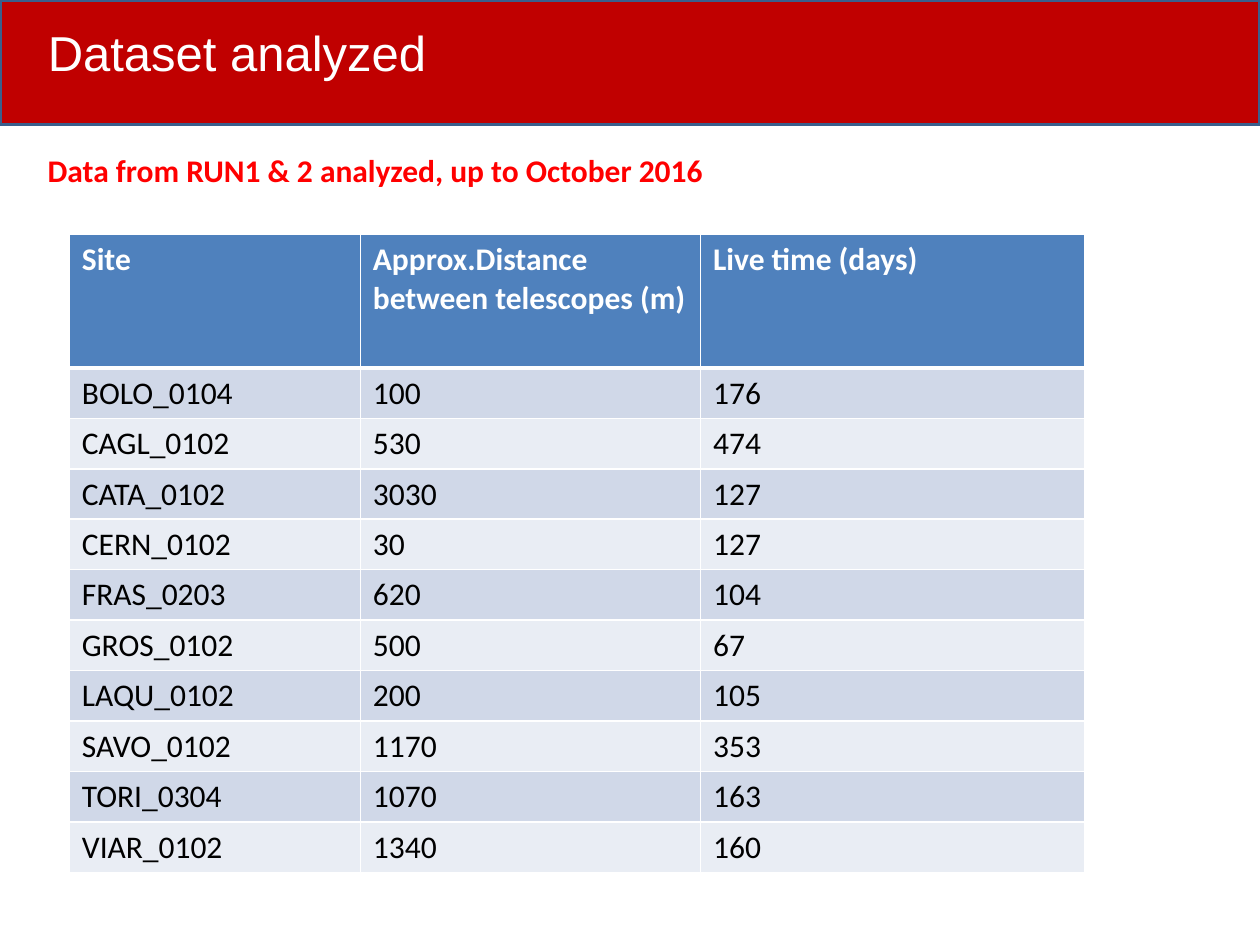
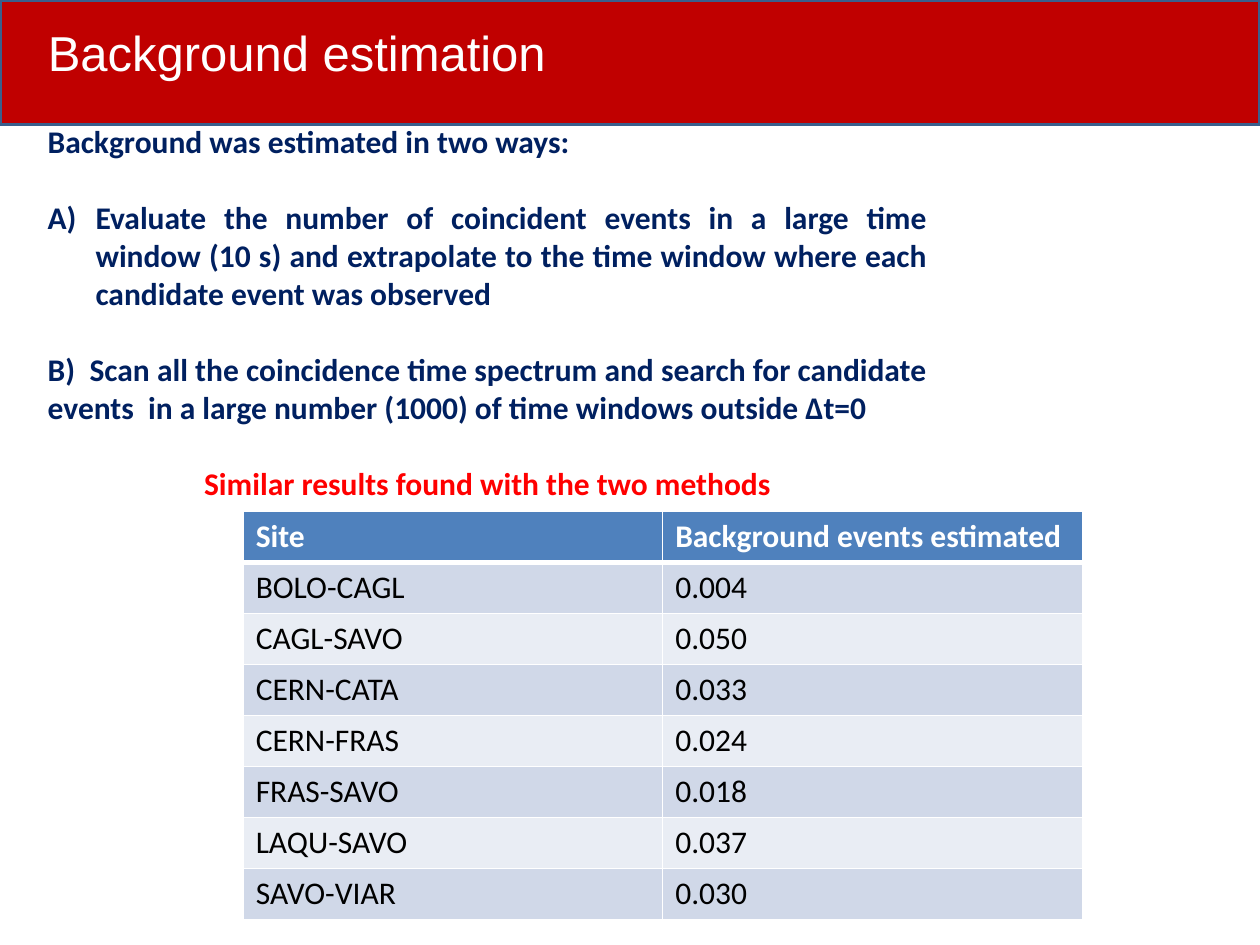
from lxml import etree
from pptx import Presentation, util as u
from pptx.dml.color import RGBColor
from pptx.enum import shapes, text
from pptx.oxml import ns

WHITE = RGBColor(0xFF, 0xFF, 0xFF)
BLACK = RGBColor(0x00, 0x00, 0x00)
BAND_RED = RGBColor(0xC0, 0x00, 0x00)
BAND_EDGE = RGBColor(0x3A, 0x5F, 0x8C)
RED = RGBColor(0xFF, 0x00, 0x00)
NAVY = RGBColor(0x00, 0x20, 0x60)
HEADER_BLUE = RGBColor(0x4F, 0x81, 0xBD)
STRIPES = RGBColor(0xD0, 0xD8, 0xE8), RGBColor(0xE9, 0xED, 0xF4)

WIDTH, HEIGHT = u.Inches(10), u.Inches(7.5)
COLS, ROWS = 100, 75
TITLE_ONLY = 5
LEFT = 2.8
BLANK_LINE = 22
HANGING = 3.8


def cols(n):
    return round(WIDTH * n / COLS)


def rows(n):
    return round(HEIGHT * n / ROWS)


def box(x, y, w, h):
    return cols(x), rows(y), cols(w), rows(h)


def write(p, words, *, size=18, font="Calibri", color=BLACK, bold=False,
          align=text.PP_ALIGN.LEFT, before=0, numbered=False):
    """Fill paragraph p with one formatted run."""
    p.alignment = align
    p.space_before = u.Pt(before)
    r = p.add_run()
    r.text = words
    r.font.size = u.Pt(size)
    r.font.name = font
    r.font.bold = bold
    r.font.color.rgb = color
    if numbered:
        pPr = p._p.get_or_add_pPr()
        pPr.set("marL", str(cols(HANGING)))
        pPr.set("indent", str(-cols(HANGING)))
        etree.SubElement(pPr, ns.qn("a:buAutoNum"), type="alphaUcParenR")


def set_borders(cell, **widths):
    """Draw white cell borders; the keywords L, R, T and B are widths in points."""
    tcPr = cell._tc.get_or_add_tcPr()
    for side in "LRTB":
        ln = etree.SubElement(tcPr, ns.qn(f"a:ln{side}"),
                              w=str(u.Pt(widths.get(side, 1))))
        fill = etree.SubElement(ln, ns.qn("a:solidFill"))
        etree.SubElement(fill, ns.qn("a:srgbClr"), val=str(WHITE))


class Deck:
    def __init__(self):
        self.prs = Presentation()
        self.prs.slide_width, self.prs.slide_height = WIDTH, HEIGHT
        self.s = None

    def slide(self, title):
        self.s = self.prs.slides.add_slide(self.prs.slide_layouts[TITLE_ONLY])
        self.band()
        sp = self.s.shapes.title
        sp.left, sp.top, sp.width, sp.height = box(LEFT, 1.3, 53.5, 5.7)
        tf = sp.text_frame
        tf.vertical_anchor = text.MSO_ANCHOR.TOP
        tf.auto_size = text.MSO_AUTO_SIZE.NONE
        write(tf.paragraphs[0], title, size=28, font="Arial", color=WHITE)

    def band(self):
        """Add the red title band behind everything else."""
        sp = self.s.shapes.add_shape(shapes.MSO_SHAPE.RECTANGLE,
                                     *box(0, 0, COLS, 9.9))
        sp.shadow.inherit = False
        sp.fill.solid()
        sp.fill.fore_color.rgb = BAND_RED
        sp.line.color.rgb = BAND_EDGE
        sp.line.width = u.Pt(2)
        self.s.shapes._spTree.insert(2, sp._element)

    def text(self, place, *paragraphs):
        """Add a text box; each paragraph is a pair of words and format."""
        tf = self.s.shapes.add_textbox(*box(*place)).text_frame
        tf.word_wrap = True
        for i, (words, style) in enumerate(paragraphs):
            p = tf.add_paragraph() if i else tf.paragraphs[0]
            write(p, words, bold=True, **style)

    def table(self, x, y, widths, header_height, row_height, records):
        """Add a striped table whose first record is the header."""
        heights = [header_height] + [row_height] * (len(records) - 1)
        frame = self.s.shapes.add_table(
            len(records), len(widths), *box(x, y, sum(widths), sum(heights)))
        table = frame.table
        for column, width in zip(table.columns, widths):
            column.width = cols(width)
        for i, (row, height, record) in enumerate(
                zip(table.rows, heights, records)):
            row.height = rows(height)
            header = i == 0
            for cell, words in zip(row.cells, record):
                set_borders(cell, T=3 if i == 1 else 1, B=3 if header else 1)
                cell.fill.solid()
                cell.fill.fore_color.rgb = (
                    HEADER_BLUE if header else STRIPES[(i - 1) % 2])
                write(cell.text_frame.paragraphs[0], words, bold=header,
                      color=WHITE if header else BLACK)


def dataset_slide(deck):
    deck.slide("Dataset analyzed")
    deck.text((LEFT, 11.5, 79.4, 4),
              ("Data from RUN1 & 2 analyzed, up to October 2016", dict(color=RED)))
    deck.table(5.5, 18.6, (23.1, 27, 30.5), 10.6, 4, [
        ("Site", "Approx.Distance between telescopes (m)", "Live time (days)"),
        ("BOLO_0104", "100", "176"),
        ("CAGL_0102", "530", "474"),
        ("CATA_0102", "3030", "127"),
        ("CERN_0102", "30", "127"),
        ("FRAS_0203", "620", "104"),
        ("GROS_0102", "500", "67"),
        ("LAQU_0102", "200", "105"),
        ("SAVO_0102", "1170", "353"),
        ("TORI_0304", "1070", "163"),
        ("VIAR_0102", "1340", "160"),
    ])


def background_slide(deck):
    deck.slide("Background estimation")
    method = dict(color=NAVY, align=text.PP_ALIGN.JUSTIFY, before=BLANK_LINE)
    deck.text(
        (LEFT, 9.2, 71.8, 34.3),
        ("Background was estimated in two ways:", dict(color=NAVY)),
        ("Evaluate the number of coincident events in a large time window "
         "(10 s) and extrapolate to the time window where each candidate "
         "event was observed", dict(method, numbered=True)),
        ("B)  Scan all the coincidence time spectrum and search for candidate "
         "events  in a large number (1000) of time windows outside Δt=0", method),
        ("Similar results found with the two methods",
         dict(color=RED, align=text.PP_ALIGN.CENTER, before=BLANK_LINE)))
    deck.table(19.3, 40.6, (33.3, 33.3), 4.05, 4.05, [
        ("Site", "Background events estimated"),
        ("BOLO-CAGL", "0.004"),
        ("CAGL-SAVO", "0.050"),
        ("CERN-CATA", "0.033"),
        ("CERN-FRAS", "0.024"),
        ("FRAS-SAVO", "0.018"),
        ("LAQU-SAVO", "0.037"),
        ("SAVO-VIAR", "0.030"),
    ])


def main():
    deck = Deck()
    dataset_slide(deck)
    background_slide(deck)
    deck.prs.save("out.pptx")


if __name__ == "__main__":
    main()
